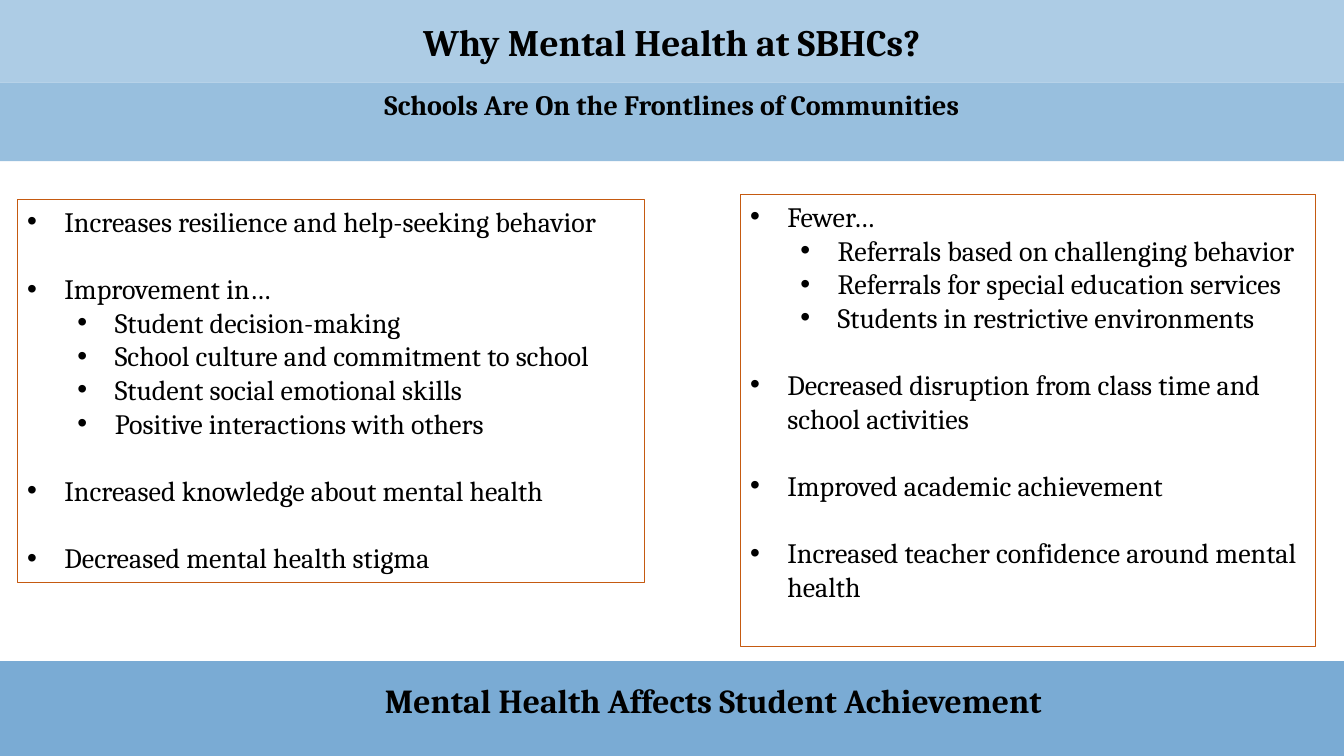
import pptx
import pptx.dml.color
import pptx.enum.shapes
import pptx.enum.text
import pptx.oxml.ns
import pptx.util
from lxml import etree

WIDTH, HEIGHT = 13.33, 7.5
FONT = "Cambria"
INDENT, LEVEL_STEP = 0.37, 0.5
BLANK_LINE = 24

TITLE = "Why Mental Health at SBHCs?"
SUBTITLE = "Schools Are On the Frontlines of Communities"
CONCLUSION = "Mental Health Affects Student Achievement"

# Each group is a bullet with its sub-bullets.
STUDENT_GAINS = [
    ("Increases resilience and help-seeking behavior", []),
    ("Improvement in…", [
        "Student decision-making",
        "School culture and commitment to school",
        "Student social emotional skills",
        "Positive interactions with others",
    ]),
    ("Increased knowledge about mental health", []),
    ("Decreased mental health stigma", []),
]
SCHOOL_GAINS = [
    ("Fewer…", [
        "Referrals based on challenging behavior",
        "Referrals for special education services",
        "Students in restrictive environments",
    ]),
    ("Decreased disruption from class time and school activities", []),
    ("Improved academic achievement", []),
    ("Increased teacher confidence around mental health", []),
]
PANELS = [
    ((0.17, 1.98, 6.22, 3.8), STUDENT_GAINS),
    ((7.34, 1.93, 5.71, 4.48), SCHOOL_GAINS),
]

TITLE_BAND = (0, 0, WIDTH, 0.82)
SUBTITLE_BAND = (0, 0.82, WIDTH, 0.78)
FOOTER_BAND = (0, 6.56, WIDTH, 0.94)
CONCLUSION_AREA = (3.61, 6.7, 6.93, 0.5)


def color(value):
    return pptx.dml.color.RGBColor.from_string(value)


def inches(area):
    return [pptx.util.Inches(length) for length in area]


def add_rectangle(page, area, fill=None, line=None):
    box = page.shapes.add_shape(
        pptx.enum.shapes.MSO_SHAPE.RECTANGLE, *inches(area))
    box.shadow.inherit = False
    if fill:
        box.fill.solid()
        box.fill.fore_color.rgb = color(fill)
    else:
        box.fill.background()
    if line:
        box.line.color.rgb = color(line)
        box.line.width = pptx.util.Pt(0.75)
    else:
        box.line.fill.background()
    return box


def prepare_frame(box, anchor="TOP"):
    frame = box.text_frame
    frame.word_wrap = True
    frame.auto_size = pptx.enum.text.MSO_AUTO_SIZE.NONE
    frame.vertical_anchor = pptx.enum.text.MSO_ANCHOR[anchor]
    return frame


def write(para, text, size=20, bold=False, align="LEFT", before=0):
    para.alignment = pptx.enum.text.PP_ALIGN[align]
    para.space_before = pptx.util.Pt(before)
    span = para.add_run()
    span.text = text
    span.font.name = FONT
    span.font.size = pptx.util.Pt(size)
    span.font.bold = bold
    span.font.color.rgb = color("000000")


def add_bullet(para, level):
    para.level = level
    properties = para._p.get_or_add_pPr()
    margin = pptx.util.Inches(INDENT + level * LEVEL_STEP)
    properties.set("marL", str(margin))
    properties.set("indent", str(-pptx.util.Inches(INDENT)))
    tag = pptx.oxml.ns.qn
    etree.SubElement(properties, tag("a:buFont"), typeface="Arial")
    etree.SubElement(properties, tag("a:buChar"), char="•")


def add_panel(page, area, groups):
    frame = prepare_frame(add_rectangle(page, area, line="C55A11"))
    for number, (heading, details) in enumerate(groups):
        for position, text in enumerate([heading, *details]):
            starts_group = position == 0
            first = number == 0 and starts_group
            para = frame.paragraphs[0] if first else frame.add_paragraph()
            add_bullet(para, 0 if starts_group else 1)
            gap = BLANK_LINE if starts_group and not first else 0
            write(para, text, before=gap)


def main():
    deck = pptx.Presentation()
    deck.slide_width, deck.slide_height = inches((WIDTH, HEIGHT))
    page = deck.slides.add_slide(deck.slide_layouts[5])

    title = page.shapes.title
    title.left, title.top, title.width, title.height = inches(TITLE_BAND)
    title.fill.solid()
    title.fill.fore_color.rgb = color("ADCCE5")
    write(prepare_frame(title, "MIDDLE").paragraphs[0], TITLE,
          size=26.7, bold=True, align="CENTER")

    subtitle = add_rectangle(page, SUBTITLE_BAND, fill="98BFDE")
    write(prepare_frame(subtitle).paragraphs[0], SUBTITLE,
          bold=True, align="CENTER")

    for area, groups in PANELS:
        add_panel(page, area, groups)

    add_rectangle(page, FOOTER_BAND, fill="7AABD4")
    conclusion = page.shapes.add_textbox(*inches(CONCLUSION_AREA))
    write(prepare_frame(conclusion).paragraphs[0], CONCLUSION,
          size=24, bold=True, align="CENTER")

    deck.save("out.pptx")


if __name__ == "__main__":
    main()
